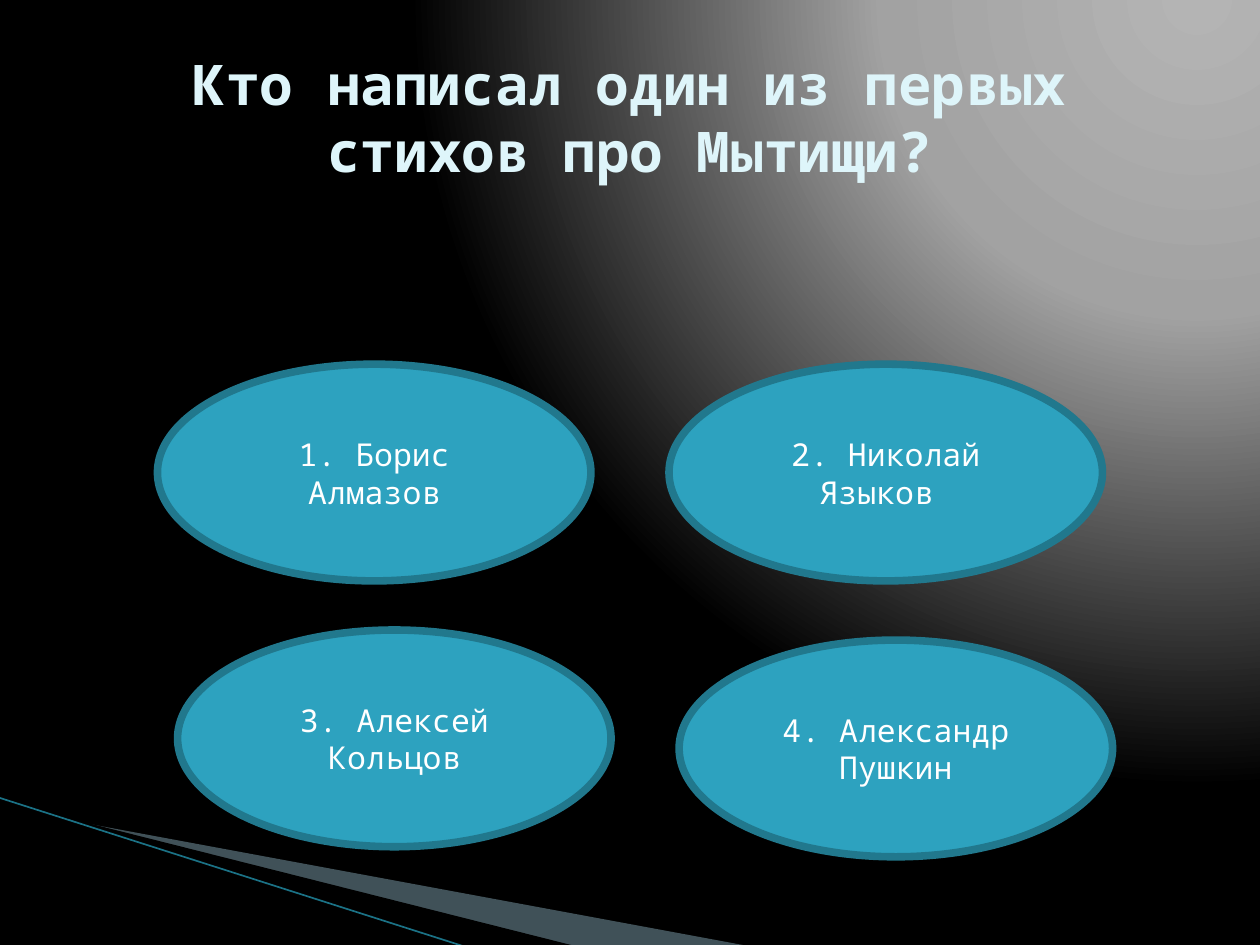
from lxml.etree import SubElement
from pptx import Presentation
from pptx.dml.color import RGBColor
from pptx.enum.shapes import MSO_CONNECTOR, MSO_SHAPE
from pptx.enum.text import MSO_ANCHOR, PP_ALIGN
from pptx.oxml import parse_xml
from pptx.oxml.ns import nsdecls, qn
from pptx.util import Inches, Pt

COLORS = {
    "title": "DEF5FA",
    "answer": "FFFFFF",
    "oval": "2DA2BF",
    "oval_edge": "21788D",
    "wedge": "A0CBDC",
    "shade": "000000",
    "stripe": "1B7286",
}
GLOW = [(0, "B4B4B4"), (40, "A2A2A2"), (100, "000000")]
FONT = "Noto Sans Mono"
WIDTH, HEIGHT = 10, 7.5
OVAL_WIDTH, OVAL_HEIGHT = 3.44, 1.72

# Each answer with the left and top of its oval
ANSWERS = [
    ("1. Борис Алмазов", 1.25, 2.89),
    ("2. Николай Языков ", 5.31, 2.89),
    ("3. Алексей Кольцов", 1.41, 5),
    ("4. Александр Пушкин", 5.39, 5.08),
]


def color(name):
    return RGBColor.from_string(COLORS[name])


def set_background(page):
    """Radial glow centred near the top right corner."""
    stops = "".join(
        f'<a:gs pos="{share * 1000}"><a:srgbClr val="{value}"/></a:gs>'
        for share, value in GLOW
    )
    background = parse_xml(
        f'<p:bg {nsdecls("p", "a")}><p:bgPr><a:gradFill rotWithShape="1">'
        f'<a:gsLst>{stops}</a:gsLst><a:path path="circle">'
        '<a:fillToRect l="95000" t="-106000" r="5000" b="206000"/></a:path>'
        "</a:gradFill><a:effectLst/></p:bgPr></p:bg>"
    )
    page.element.cSld.insert(0, background)


def write_text(shape, text, *, size, ink, bold=False, margin=0.1):
    frame = shape.text_frame
    frame.word_wrap = True
    frame.vertical_anchor = MSO_ANCHOR.MIDDLE
    frame.margin_left = frame.margin_right = Inches(margin)
    para = frame.paragraphs[0]
    para.alignment = PP_ALIGN.CENTER
    span = para.add_run()
    span.text = text
    span.font.name = FONT
    span.font.size = Pt(size)
    span.font.bold = bold
    span.font.color.rgb = color(ink)


def add_wedge(page, points, fill, opacity=100):
    start, *rest = [(Inches(x), Inches(y)) for x, y in points]
    builder = page.shapes.build_freeform(*start, scale=1.0)
    builder.add_line_segments(rest, close=True)
    wedge = builder.convert_to_shape()
    wedge.shadow.inherit = False
    wedge.fill.solid()
    wedge.fill.fore_color.rgb = color(fill)
    wedge.line.fill.background()
    if opacity < 100:
        tint = wedge.element.spPr.find(f"{qn('a:solidFill')}/{qn('a:srgbClr')}")
        SubElement(tint, qn("a:alpha"), val=str(opacity * 1000))


def add_stripe(page, start, end):
    ends = [Inches(value) for value in (*start, *end)]
    stripe = page.shapes.add_connector(MSO_CONNECTOR.STRAIGHT, *ends)
    stripe.line.color.rgb = color("stripe")
    stripe.line.width = Pt(0.95)
    SubElement(stripe.element.spPr, qn("a:effectLst"))


def add_title(page, text):
    box = page.shapes.add_textbox(
        Inches(0.05 * WIDTH), Inches(0.04 * HEIGHT),
        Inches(0.9 * WIDTH), Inches(HEIGHT / 6),
    )
    write_text(box, text, size=32, ink="title", bold=True, margin=0.15)


def add_answer(page, text, left, top):
    oval = page.shapes.add_shape(
        MSO_SHAPE.OVAL, Inches(left), Inches(top),
        Inches(OVAL_WIDTH), Inches(OVAL_HEIGHT),
    )
    oval.shadow.inherit = False
    oval.fill.solid()
    oval.fill.fore_color.rgb = color("oval")
    oval.line.color.rgb = color("oval_edge")
    oval.line.width = Pt(4.33)
    write_text(oval, text, size=18, ink="answer")


def main():
    deck = Presentation()
    deck.slide_width, deck.slide_height = Inches(WIDTH), Inches(HEIGHT)
    page = deck.slides.add_slide(deck.slide_layouts[6])
    set_background(page)

    # Corner decoration
    add_wedge(page, [(0.55, 6.51), (5.95, 7.51), (4.56, 7.51), (0.55, 6.5)],
              "wedge", opacity=40)
    add_wedge(page, [(0.53, 6.49), (4.57, 7.51), (3.72, 7.52), (0.54, 6.5)],
              "shade")
    add_stripe(page, (-0.01, 6.33), (3.71, 7.52))

    # Question and answers
    add_title(page, "Кто написал один из первых стихов про Мытищи?")
    for text, left, top in ANSWERS:
        add_answer(page, text, left, top)

    deck.save("out.pptx")


if __name__ == "__main__":
    main()
